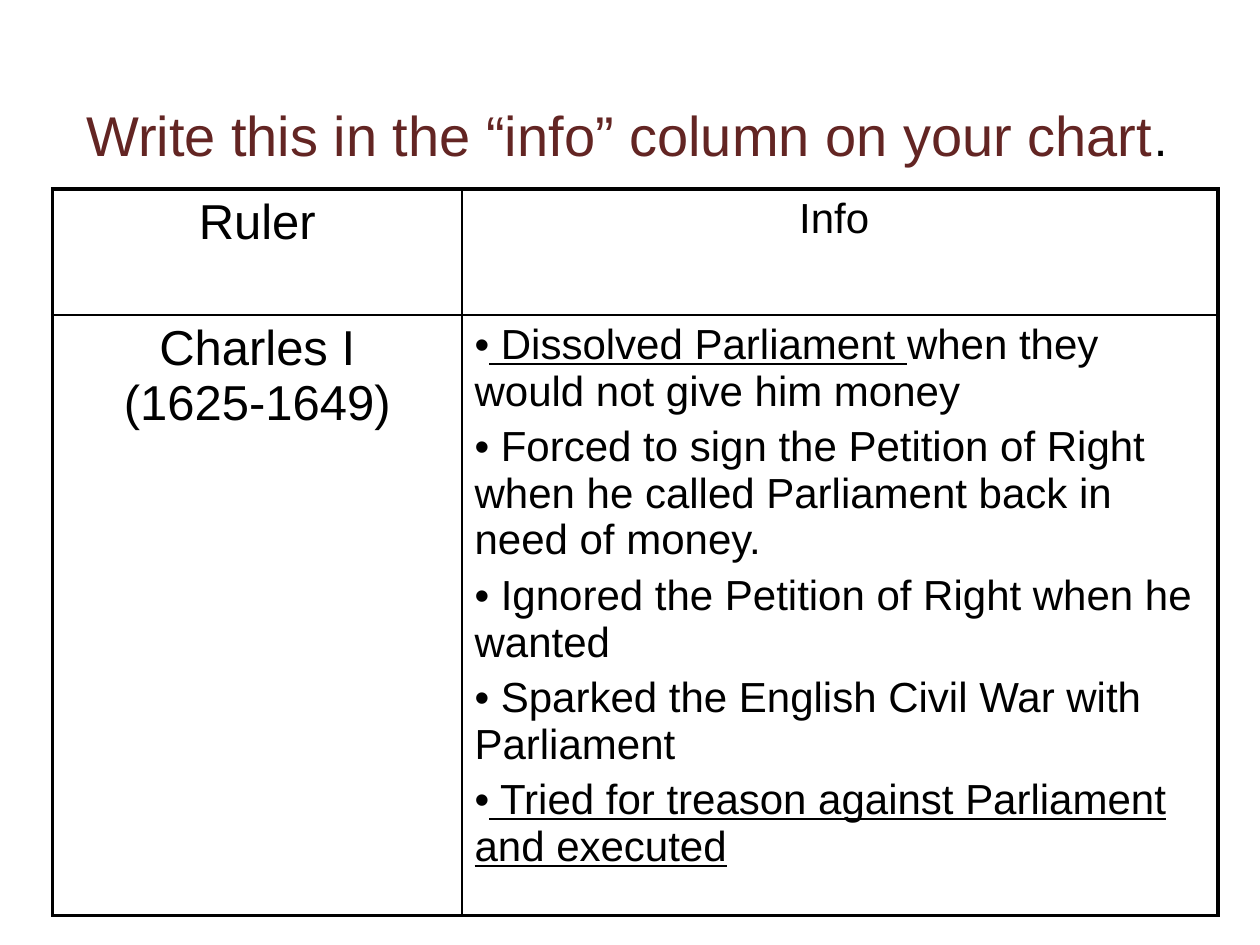
import lxml.etree
import pptx
import pptx.dml.color
import pptx.enum.text
import pptx.oxml.ns
import pptx.util

Pt = pptx.util.Pt
ALIGN = pptx.enum.text.PP_ALIGN
BLACK = pptx.dml.color.RGBColor(0x00, 0x00, 0x00)
MAROON = pptx.dml.color.RGBColor(0x63, 0x25, 0x23)

OUTER_LINE, INNER_LINE = 2.25, 1
COLUMN_WIDTHS = (234, 432)
ROW_HEIGHTS = (72, 252)

# Each paragraph is a list of (text, underlined) spans.
FACTS = [
    [(" Dissolved Parliament ", True), ("when they would not give him money", False)],
    [(" Forced to sign the Petition of Right when he called Parliament back in need of money.", False)],
    [(" Ignored the Petition of Right when he wanted", False)],
    [(" Sparked the English Civil War with Parliament", False)],
    [(" Tried for treason against Parliament and executed", True)],
]
CENTERED = {"align": ALIGN.CENTER, "bullet": False}
BULLETED = {"align": ALIGN.LEFT, "bullet": True}
CELLS = [
    [([[("Ruler", False)]], 28, CENTERED), ([[("Info ", False)]], 24, CENTERED)],
    [([[("Charles I\n(1625-1649)", False)]], 28, CENTERED), (FACTS, 24, BULLETED)],
]


def set_attributes(target, values):
    for name, value in values.items():
        setattr(target, name, value)


def add_child(parent, tag, **attributes):
    child = lxml.etree.SubElement(parent, pptx.oxml.ns.qn(tag))
    for name, value in attributes.items():
        child.set(name, str(value))
    return child


def add_span(para, text, size, color, underline=False):
    """Add text to a paragraph, with a line break at each newline."""
    for index, line in enumerate(text.split("\n")):
        if index:
            para.add_line_break()
        span = para.add_run()
        span.text = line
        set_attributes(span.font, {"name": "Arial", "size": Pt(size), "underline": underline})
        span.font.color.rgb = color


def add_bullet(para):
    properties = para._p.get_or_add_pPr()
    properties.set("marL", "0")
    properties.set("indent", "0")
    add_child(properties, "a:buFont", typeface="Arial")
    add_child(properties, "a:buChar", char="•")


def set_borders(cell, widths):
    properties = cell._tc.get_or_add_tcPr()
    for tag, width in widths.items():
        line = add_child(properties, tag, w=int(Pt(width)))
        add_child(add_child(line, "a:solidFill"), "a:srgbClr", val=BLACK)


def fill_cell(cell, paragraphs, size, style):
    for index, spans in enumerate(paragraphs):
        frame = cell.text_frame
        para = frame.add_paragraph() if index else frame.paragraphs[0]
        set_attributes(para, {"alignment": style["align"], "space_before": Pt(size * 0.2)})
        if style["bullet"]:
            add_bullet(para)
        for text, underline in spans:
            add_span(para, text, size, BLACK, underline)


def place_title(page, box):
    title = page.shapes.title
    set_attributes(title, dict(zip(("left", "top", "width", "height"), map(Pt, box))))
    frame = title.text_frame
    set_attributes(frame, {
        "word_wrap": False,
        "auto_size": pptx.enum.text.MSO_AUTO_SIZE.SHAPE_TO_FIT_TEXT,
        "vertical_anchor": pptx.enum.text.MSO_ANCHOR.TOP,
    })
    para = frame.paragraphs[0]
    para.alignment = ALIGN.LEFT
    add_span(para, "Write this in the “info” column on your chart", 32, MAROON)
    add_span(para, ".", 28, BLACK)


def place_ruler_table(page, left, top):
    last_row, last_column = len(ROW_HEIGHTS) - 1, len(COLUMN_WIDTHS) - 1
    table = page.shapes.add_table(
        len(ROW_HEIGHTS), len(COLUMN_WIDTHS), Pt(left), Pt(top),
        Pt(sum(COLUMN_WIDTHS)), Pt(sum(ROW_HEIGHTS))).table
    set_attributes(table, {"first_row": False, "horz_banding": False})
    for column, width in zip(table.columns, COLUMN_WIDTHS):
        column.width = Pt(width)
    for r, (row, height) in enumerate(zip(table.rows, ROW_HEIGHTS)):
        row.height = Pt(height)
        for c, cell in enumerate(row.cells):
            at_edge = {"a:lnL": c == 0, "a:lnR": c == last_column,
                       "a:lnT": r == 0, "a:lnB": r == last_row}
            set_borders(cell, {tag: OUTER_LINE if edge else INNER_LINE
                               for tag, edge in at_edge.items()})
            cell.fill.background()
            fill_cell(cell, *CELLS[r][c])


def main():
    deck = pptx.Presentation()
    set_attributes(deck, {"slide_width": Pt(720), "slide_height": Pt(540)})
    page = deck.slides.add_slide(deck.slide_layouts.get_by_name("Title Only"))
    place_ruler_table(page, 30, 108)
    place_title(page, (42, 54, 636, 46))
    deck.save("out.pptx")


if __name__ == "__main__":
    main()
